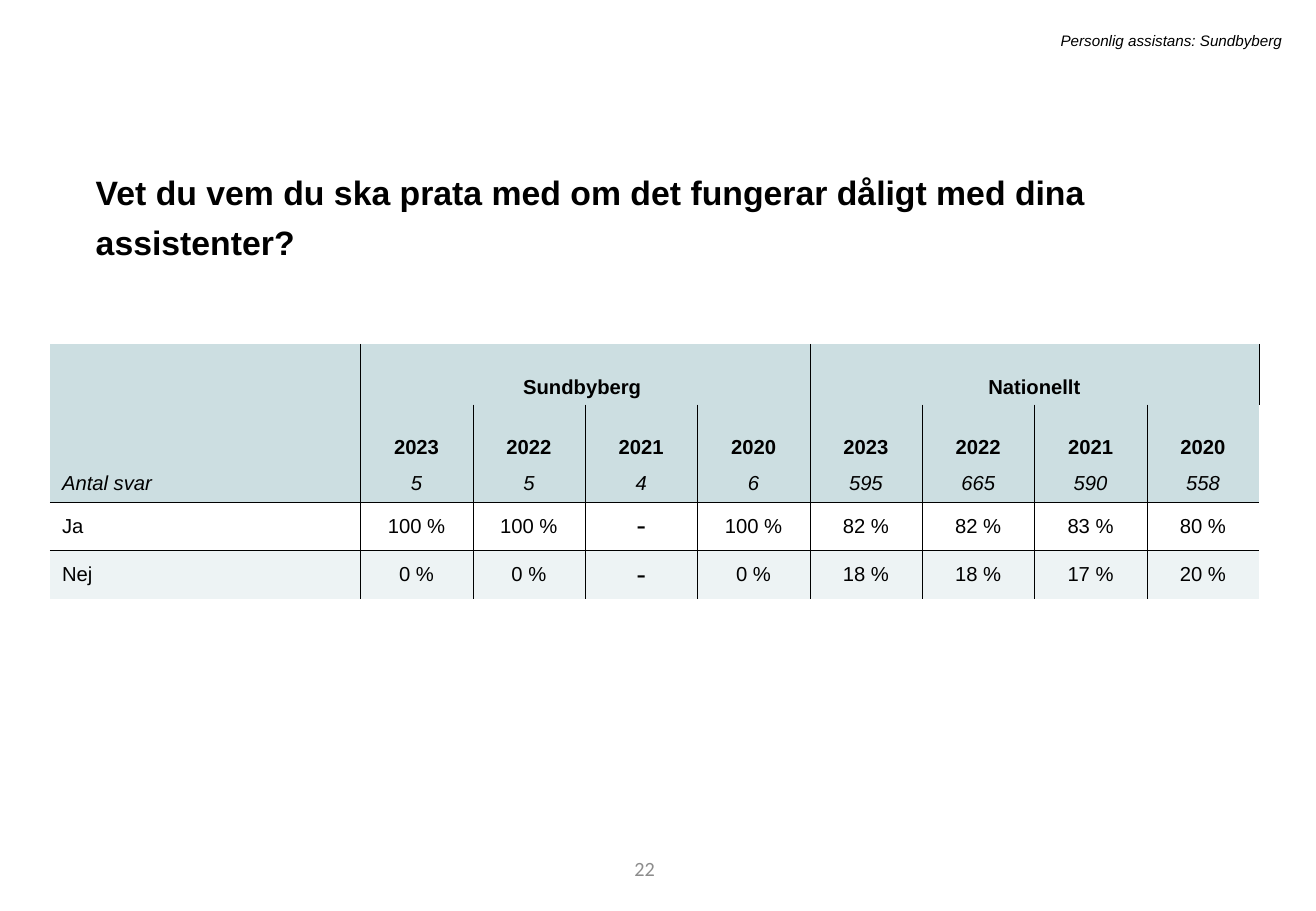
from lxml.etree import SubElement
from pptx import Presentation
from pptx.dml.color import RGBColor
from pptx.enum.text import MSO_ANCHOR as Anchor, PP_ALIGN as Align
from pptx.oxml.ns import qn
from pptx.util import Pt

QUESTION = "Vet du vem du ska prata med om det fungerar dåligt med dina assistenter?"
REPORT = "Personlig assistans: Sundbyberg"
PAGE = "22"
AREAS = ["Sundbyberg ", "Nationellt"]
YEARS = ["2023", "2022", "2021", "2020"]
COUNTS = ["Antal svar", "5", "5", "4", "6", "595", "665", "590", "558"]
ANSWERS = [
    ["Ja", "100 %", "100 %", "-", "100 %", "82 %", "82 %", "83 %", "80 %"],
    ["Nej", "0 %", "0 %", "-", "0 %", "18 %", "18 %", "17 %", "20 %"],
]
BLACK = RGBColor(0x00, 0x00, 0x00)
GREY = RGBColor(0x8C, 0x8C, 0x8C)
HEADER = RGBColor(0xCC, 0xDE, 0xE1)
WHITE = RGBColor(0xFF, 0xFF, 0xFF)
STRIPE = RGBColor(0xED, 0xF3, 0xF4)
NO_GRID = "{2D5ABB26-0587-4C30-8999-92F81FD0307C}"

LABEL_WIDTH, VALUE_WIDTH = 184, 66.6
ROW_HEIGHTS = [36, 36, 21.6, 28.8, 28.8]
ROW_FILLS = [HEADER, HEADER, HEADER, WHITE, STRIPE]
COUNT_ROW = 2


def style(paragraph, size, align, color=BLACK, name="Arial", bold=False, italic=False):
    paragraph.alignment = align
    for run in paragraph.runs:
        font = run.font
        font.size, font.name, font.bold, font.italic = Pt(size), name, bold, italic
        font.color.rgb = color


def add_text(slide, text, left, top, width, height, anchor=Anchor.TOP):
    frame = slide.shapes.add_textbox(Pt(left), Pt(top), Pt(width), Pt(height)).text_frame
    frame.word_wrap = True
    frame.vertical_anchor = anchor
    frame.text = text
    return frame.paragraphs[0]


def add_border(cell, side):
    line = SubElement(cell._tc.get_or_add_tcPr(), qn("a:ln" + side), w=str(Pt(0.25)))
    fill = SubElement(line, qn("a:solidFill"))
    SubElement(fill, qn("a:srgbClr"), val=str(BLACK))


def add_answers(slide):
    span = len(YEARS)
    last = span * len(AREAS)
    area_row = [""] * (last + 1)
    area_row[1::span] = AREAS
    rows = [area_row, [""] + YEARS * len(AREAS), COUNTS] + ANSWERS
    frame = slide.shapes.add_table(
        len(rows), last + 1, Pt(29.6), Pt(203.8),
        Pt(LABEL_WIDTH + last * VALUE_WIDTH), Pt(sum(ROW_HEIGHTS)))
    table = frame.table
    table.first_row = table.horz_banding = False
    table._tbl.tblPr.find(qn("a:tableStyleId")).text = NO_GRID
    for c, column in enumerate(table.columns):
        column.width = Pt(VALUE_WIDTH if c else LABEL_WIDTH)
    for start in range(1, last, span):
        table.cell(0, start).merge(table.cell(0, start + span - 1))

    for r, values in enumerate(rows):
        table.rows[r].height = Pt(ROW_HEIGHTS[r])
        for c, value in enumerate(values):
            cell = table.cell(r, c)
            if c and (r or c % span == 1):
                add_border(cell, "L")
            if (r and c < last) or (r == 0 and (c == 0 or not cell.is_spanned)):
                add_border(cell, "R")
            if r == COUNT_ROW + 1:
                add_border(cell, "T")
            if r == COUNT_ROW:
                add_border(cell, "B")
            cell.fill.solid()
            cell.fill.fore_color.rgb = ROW_FILLS[r]
            cell.vertical_anchor = Anchor.BOTTOM if r < COUNT_ROW else Anchor.MIDDLE
            if value:
                cell.text_frame.text = value
                size, name = (18, "Calibri") if value == "-" else (12, "Arial")
                style(cell.text_frame.paragraphs[0], size,
                      Align.CENTER if c else Align.LEFT, name=name,
                      bold=r < COUNT_ROW, italic=r == COUNT_ROW)


def main():
    deck = Presentation()
    deck.slide_width, deck.slide_height = Pt(780), Pt(540)
    slide = deck.slides.add_slide(deck.slide_layouts[6])

    page = add_text(slide, PAGE, 219.6, 500.4, 175.7, 28.8, Anchor.MIDDLE)
    style(page, 12, Align.RIGHT, GREY, "Calibri")

    question = add_text(slide, QUESTION, 49.7, 92.2, 676.8, 33.8)
    question.line_spacing = 1.25
    question.space_before = Pt(10)
    style(question, 20, Align.LEFT, bold=True)

    add_answers(slide)

    report = add_text(slide, REPORT, 128.9, 15.1, 637.9, 18)
    style(report, 9, Align.RIGHT, italic=True)
    deck.save("out.pptx")


if __name__ == "__main__":
    main()
